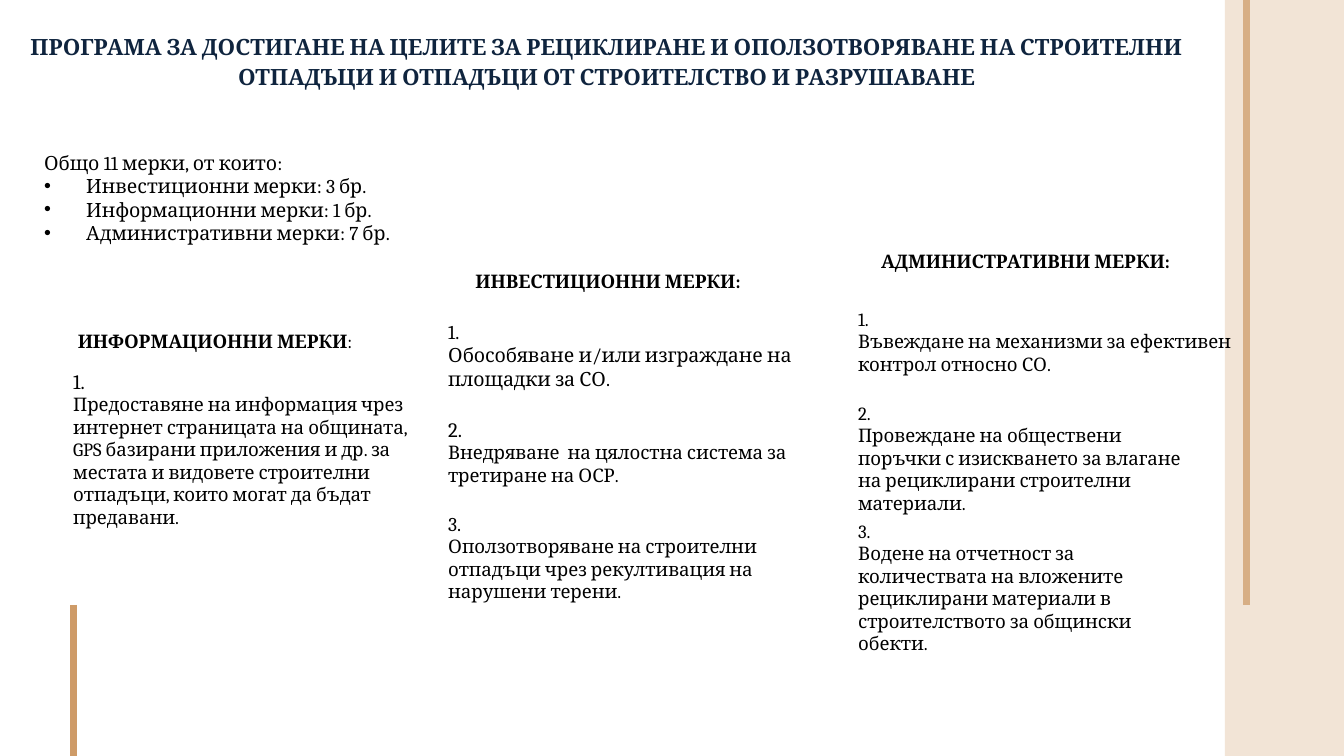
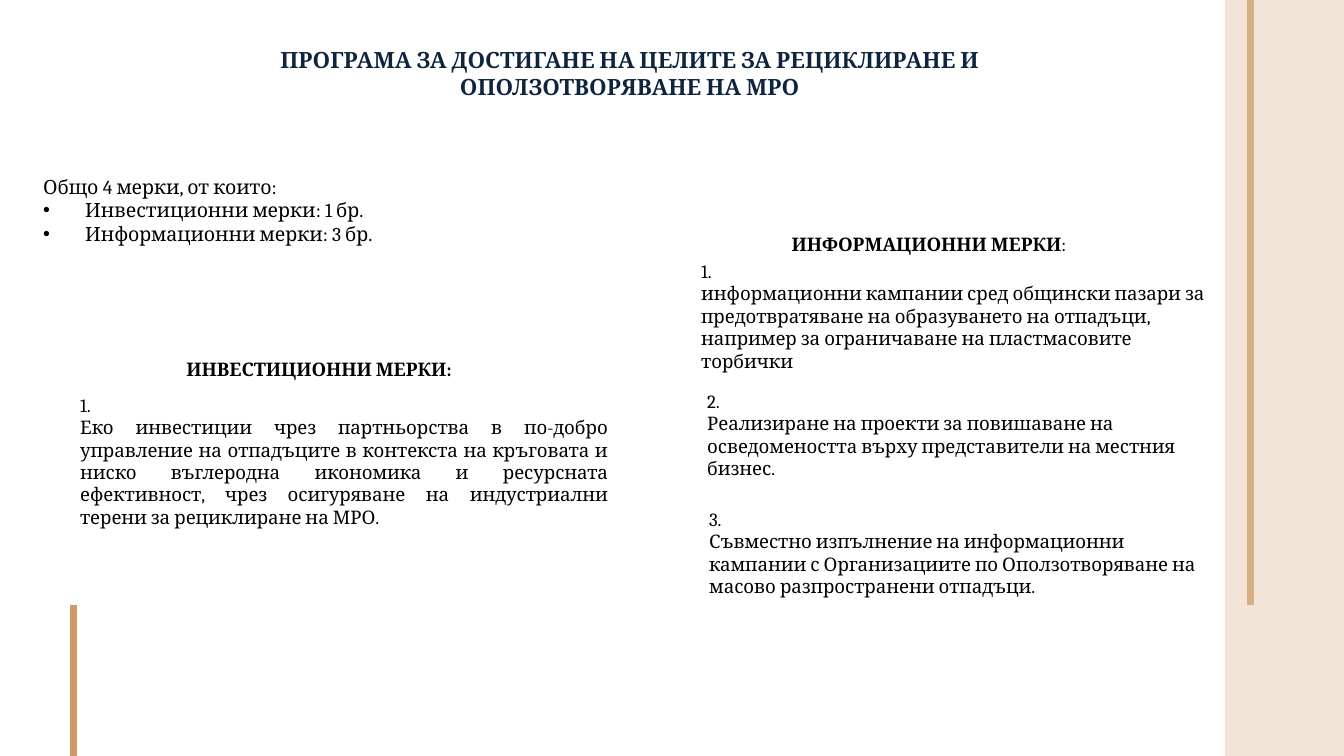
from dataclasses import dataclass

from lxml.etree import SubElement
from pptx import Presentation
from pptx.dml.color import RGBColor
from pptx.enum.shapes import MSO_CONNECTOR as Connector, MSO_SHAPE as Shape
from pptx.enum.text import MSO_AUTO_SIZE as AutoSize, PP_ALIGN as Align
from pptx.oxml.ns import qn
from pptx.util import Emu, Pt

WIDTH, HEIGHT = 1344, 756
EMU_PER_PX = 914400 / 134.4


def px(n):
    return Emu(round(n * EMU_PER_PX))


@dataclass(frozen=True)
class Theme:
    font: str = "Cambria"
    title: str = "0F243E"
    text: str = "000000"
    band: str = "F2E4D6"
    band_rule: str = "D7AE85"
    left_rule: str = "CE9B68"
    rule_width: float = 3.75
    title_size: float = 12
    summary_size: float = 10.5
    body_size: float = 10
    bullet_indent: int = 42
    heading_height: int = 36


class Deck:
    def __init__(self, theme):
        self.theme = theme
        self.prs = Presentation()
        self.prs.slide_width, self.prs.slide_height = px(WIDTH), px(HEIGHT)
        self.s = None

    def slide(self, rule_x):
        """Start a slide with its right band and the two vertical rules."""
        self.s = self.prs.slides.add_slide(self.prs.slide_layouts[6])
        self.band(1225, 0, WIDTH - 1225, HEIGHT)
        self.rule(rule_x, 0, 605, self.theme.band_rule)
        self.rule(74, 605, HEIGHT, self.theme.left_rule)

    def band(self, x, y, w, h):
        sp = self.s.shapes.add_shape(Shape.RECTANGLE, px(x), px(y), px(w), px(h))
        sp.shadow.inherit = False
        sp.fill.solid()
        sp.fill.fore_color.rgb = RGBColor.from_string(self.theme.band)
        sp.line.fill.background()

    def rule(self, x, top, bottom, color):
        line = self.s.shapes.add_connector(
            Connector.STRAIGHT, px(x), px(top), px(x), px(bottom))
        line.line.color.rgb = RGBColor.from_string(color)
        line.line.width = Pt(self.theme.rule_width)
        SubElement(line._element.spPr, qn("a:effectLst"))

    def box(self, x, y, w, h, wrap=True):
        tf = self.s.shapes.add_textbox(px(x), px(y), px(w), px(h)).text_frame
        tf.word_wrap = wrap
        tf.auto_size = AutoSize.SHAPE_TO_FIT_TEXT
        return tf

    def run(self, p, text, size, color=None, bold=False):
        r = p.add_run()
        r.text = text
        r.font.name = self.theme.font
        r.font.size = Pt(size)
        r.font.bold = bold
        r.font.color.rgb = RGBColor.from_string(color or self.theme.text)

    def bullet(self, p):
        pPr = p._p.get_or_add_pPr()
        indent = px(self.theme.bullet_indent)
        pPr.set("marL", str(indent))
        pPr.set("indent", str(-indent))
        color = SubElement(pPr, qn("a:buClr"))
        SubElement(color, qn("a:srgbClr"), val=self.theme.text)
        SubElement(pPr, qn("a:buFont"), typeface="Arial")
        SubElement(pPr, qn("a:buChar"), char="•")

    def title(self, text, x, y, w, h, spacing=1.0):
        p = self.box(x, y, w, h).paragraphs[0]
        p.alignment = Align.CENTER
        p.line_spacing = spacing
        self.run(p, text, self.theme.title_size, self.theme.title, bold=True)

    def summary(self, x, y, h, lead, counts):
        """Opening line with a bulleted count for each group of measures."""
        tf = self.box(x, y, 672, h)
        self.run(tf.paragraphs[0], lead, self.theme.summary_size)
        for count in counts:
            p = tf.add_paragraph()
            self.bullet(p)
            self.run(p, count, self.theme.summary_size)

    def heading(self, text, x, y, w, bold_colon=True):
        tf = self.box(x, y, w, self.theme.heading_height, wrap=False)
        p = tf.paragraphs[0]
        p.alignment = Align.CENTER
        self.run(p, text, self.theme.body_size, bold=True)
        self.run(p, ":", self.theme.body_size, bold=bold_colon)

    def measure(self, number, text, x, y, w, h,
                number_size=None, size=None, align=Align.LEFT):
        """Number on its own line, with the wording of the measure below."""
        tf = self.box(x, y, w, h)
        self.run(tf.paragraphs[0], f"{number}.", number_size or self.theme.body_size)
        p = tf.add_paragraph()
        p.alignment = align
        self.run(p, text, size or self.theme.body_size)


def construction_waste(deck):
    deck.slide(rule_x=1247)
    deck.title("ПРОГРАМА ЗА ДОСТИГАНЕ НА ЦЕЛИТЕ ЗА РЕЦИКЛИРАНЕ И ОПОЛЗОТВОРЯВАНЕ "
               "НА СТРОИТЕЛНИ ОТПАДЪЦИ И ОТПАДЪЦИ ОТ СТРОИТЕЛСТВО И РАЗРУШАВАНЕ",
               0, 22, 1214, 77, spacing=1.15)
    deck.summary(31, 144, 109, "Общо 11 мерки, от които:", [
        "Инвестиционни мерки: 3 бр.",
        "Информационни мерки: 1 бр.",
        "Административни мерки: 7 бр.",
    ])

    deck.heading("ИНФОРМАЦИОННИ МЕРКИ", 63, 323, 304, bold_colon=False)
    deck.measure(1, "Предоставяне на информация чрез интернет страницата на общината, "
                 "GPS базирани приложения и др. за местата и видовете строителни "
                 "отпадъци, които могат да бъдат предавани.",
                 60, 362, 364, 175, number_size=11)

    deck.heading("ИНВЕСТИЦИОННИ МЕРКИ", 460, 263, 296)
    investment_x = 435
    deck.measure(1, "Обособяване и/или изграждане на площадки за СО.",
                 investment_x, 313, 371, 85, number_size=10.5, size=10.5)
    deck.measure(2, "Внедряване  на цялостна система за третиране на ОСР.",
                 investment_x, 410, 394, 83, number_size=11)
    deck.measure(3, "Оползотворяване на строителни отпадъци чрез рекултивация "
                 "на нарушени терени.",
                 investment_x, 505, 380, 109, number_size=10.5)

    deck.heading("АДМИНИСТРАТИВНИ МЕРКИ", 867, 243, 317)
    admin_x = 845
    deck.measure(1, "Въвеждане на механизми за ефективен контрол относно СО.",
                 admin_x, 301, 402, 82)
    deck.measure(2, "Провеждане на обществени поръчки с изискването за влагане "
                 "на рециклирани строителни материали.",
                 admin_x, 395, 360, 126)
    deck.measure(3, "Водене на отчетност за количествата на вложените рециклирани "
                 "материали в строителството за общински обекти.",
                 admin_x, 513, 370, 126)


def common_waste(deck):
    deck.slide(rule_x=1251)
    deck.title("ПРОГРАМА ЗА ДОСТИГАНЕ НА ЦЕЛИТЕ ЗА РЕЦИКЛИРАНЕ И "
               "ОПОЛЗОТВОРЯВАНЕ НА МРО", 243, 40, 774, 67)
    deck.summary(30, 168, 85, "Общо 4 мерки, от които:", [
        "Инвестиционни мерки: 1 бр.",
        "Информационни мерки: 3 бр.",
    ])

    deck.heading("ИНВЕСТИЦИОННИ МЕРКИ", 171, 351, 296)
    deck.measure(1, "Еко инвестиции чрез партньорства в по-добро управление на "
                 "отпадъците в контекста на кръговата и ниско въглеродна икономика "
                 "и ресурсната ефективност, чрез осигуряване на индустриални терени "
                 "за рециклиране на МРО.",
                 67, 387, 554, 149, align=Align.JUSTIFY)

    deck.heading("ИНФОРМАЦИОННИ МЕРКИ", 777, 226, 304, bold_colon=False)
    deck.measure(1, "информационни кампании сред общински пазари за предотвратяване "
                 "на образуването на отпадъци, например за ограничаване на "
                 "пластмасовите торбички", 688, 253, 535, 103)
    deck.measure(2, "Реализиране на проекти за повишаване на осведомеността върху "
                 "представители на местния бизнес.", 694, 383, 524, 103)
    deck.measure(3, "Съвместно изпълнение на информационни кампании с Организациите "
                 "по Оползотворяване на масово разпространени отпадъци.",
                 696, 501, 516, 103)


def main():
    deck = Deck(Theme())
    construction_waste(deck)
    common_waste(deck)
    deck.prs.save("out.pptx")


if __name__ == "__main__":
    main()
